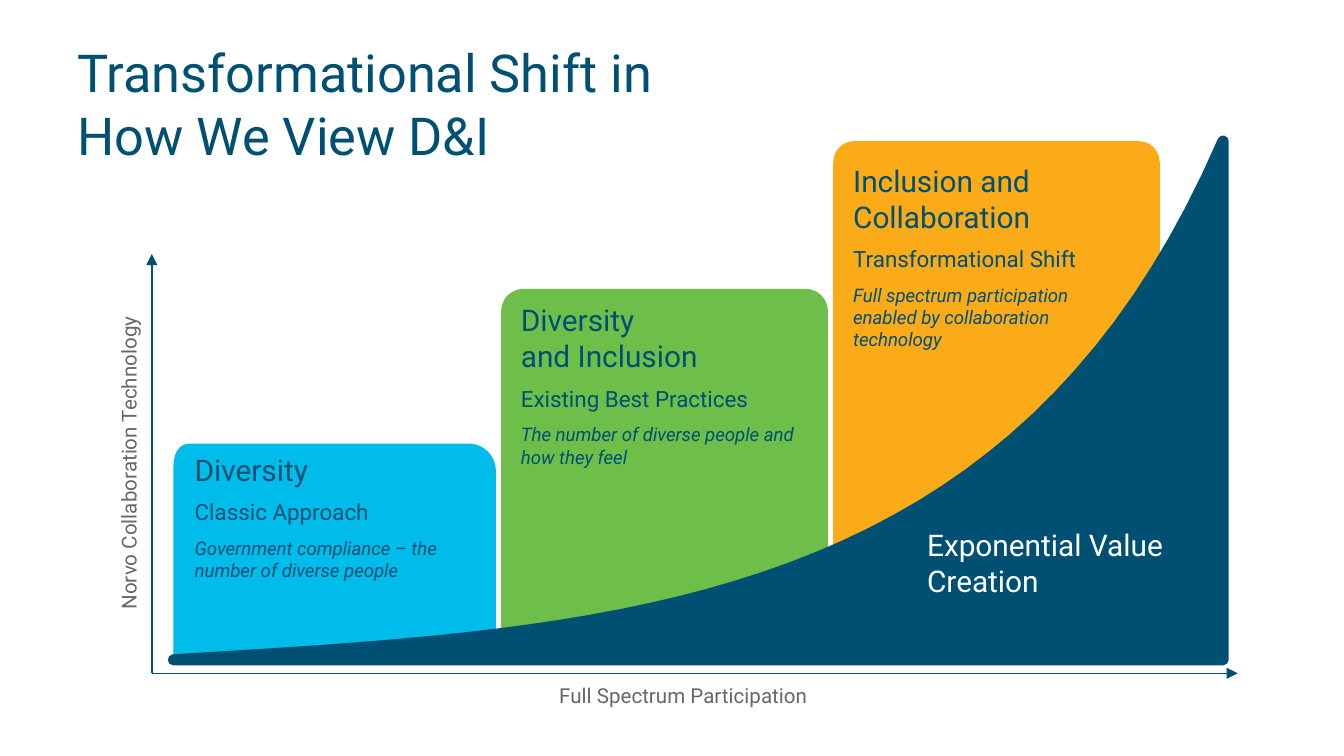
"""Build the slide on the shift from diversity to inclusion and collaboration."""
from dataclasses import dataclass

from lxml.etree import SubElement
from pptx import Presentation
from pptx.dml.color import RGBColor
from pptx.enum.shapes import MSO_CONNECTOR, MSO_SHAPE
from pptx.enum.text import MSO_ANCHOR, PP_ALIGN
from pptx.oxml.ns import qn
from pptx.util import Inches, Pt


@dataclass(frozen=True)
class Theme:
    font: str = "Roboto"
    navy: str = "005073"
    cyan: str = "00BCEB"
    green: str = "6EBE4A"
    amber: str = "FBAB18"
    gray: str = "676767"
    white: str = "FFFFFF"
    title: float = 28
    head: float = 16
    sub: float = 12
    note: float = 10
    axis: float = 11


T = Theme()


def write(tf, text, size=T.head, color=T.navy, italic=False, align=PP_ALIGN.LEFT, after=0):
    p = tf.add_paragraph() if tf.text else tf.paragraphs[0]
    p.text = text
    p.alignment = align
    p.space_after = Pt(after)
    for r in p.runs:
        r.font.name = T.font
        r.font.size = Pt(size)
        r.font.italic = italic
        r.font.color.rgb = RGBColor.from_string(color)


def bezier(a, b, c, d, n=40):
    steps = [i / n for i in range(n + 1)]
    return [
        tuple((1 - t) ** 3 * a[k] + 3 * (1 - t) ** 2 * t * b[k] + 3 * (1 - t) * t**2 * c[k] + t**3 * d[k]
              for k in (0, 1))
        for t in steps
    ]


prs = Presentation()
prs.slide_width, prs.slide_height = Inches(10), Inches(5.625)
G = prs.slide_width // 100  # square grid cell
s = prs.slides.add_slide(prs.slide_layouts[6])

# Rounded cards: the last one made is the green card
for box, radius, color in [
    ((62, 10.5, 24.3, 37.9), 0.064, T.amber),
    ((37.3, 21.5, 24.3, 27.5), 0.067, T.green),
]:
    card = s.shapes.add_shape(MSO_SHAPE.ROUNDED_RECTANGLE, *(round(v * G) for v in box))
    card.adjustments[0] = radius
    card.shadow.inherit = False
    card.fill.solid()
    card.fill.fore_color.rgb = RGBColor.from_string(color)
    card.line.fill.background()

left_corner = bezier((12.9, 35.1), (12.9, 33.9), (13.1, 33), (14.3, 33))
right_corner = bezier((34.8, 33), (36, 33), (36.9, 33.9), (36.9, 35.1))
value_curve = bezier((91, 10.5), (75.8, 45.7), (46.5, 47.1), (12.9, 49.1))
for points, color, width in [
    (left_corner + right_corner + [(36.9, 48.8), (12.9, 48.8)], T.cyan, 0),
    ([(12.9, 49.1), (91, 49.1)] + value_curve, T.navy, 6),
]:
    points = [(x * G, y * G) for x, y in points]
    fb = s.shapes.build_freeform(*points[0])
    fb.add_line_segments(points[1:], close=True)
    sp = fb.convert_to_shape()
    sp.shadow.inherit = False
    sp.fill.solid()
    sp.fill.fore_color.rgb = RGBColor.from_string(color)
    if width:
        sp.line.color.rgb = RGBColor.from_string(color)
        sp.line.width = Pt(width)
        SubElement(sp.line._get_or_add_ln(), qn("a:round"))
    else:
        sp.line.fill.background()

for x, y in [(11.3, 18.9), (92.1, 50.1)]:
    axis = s.shapes.add_connector(
        MSO_CONNECTOR.STRAIGHT, *(round(v * G) for v in (11.3, 50.1, x, y)))
    axis.line.color.rgb = RGBColor.from_string(T.navy)
    axis.line.width = Pt(0.75)
    SubElement(axis.line._get_or_add_ln(), qn("a:tailEnd"), type="triangle")
    SubElement(axis._element.spPr, qn("a:effectLst"))

for box, head, sub, note in [
    ((13.5, 33.1, 24, 14.6), "Diversity", "Classic Approach",
     "Government compliance – the number of diverse people"),
    (None, "Diversity\vand Inclusion", "Existing Best Practices",
     "The number of diverse people and how they feel"),
    ((62.5, 11.6, 22.7, 19), "Inclusion and Collaboration", "Transformational Shift",
     "Full spectrum participation enabled by collaboration technology"),
]:
    sp = s.shapes.add_textbox(*(round(v * G) for v in box)) if box else card
    tf = sp.text_frame
    tf.word_wrap = True
    tf.vertical_anchor = MSO_ANCHOR.TOP
    write(tf, head, after=6)
    write(tf, sub, size=T.sub, after=6)
    write(tf, note, size=T.note, italic=True, after=6)

axis_format = dict(size=T.axis, color=T.gray, align=PP_ALIGN.CENTER)
for box, turn, wrap, anchor, text, fmt in [
    ((4.8, 3.7, 48.4, 8), 0, True, MSO_ANCHOR.MIDDLE,
     "Transformational Shift in How We View D&I", dict(size=T.title)),
    ((-2.4, 33, 24, 2.9), 270, False, MSO_ANCHOR.TOP,
     "Norvo Collaboration Technology", axis_format),
    ((10.7, 50.3, 80.3, 2.9), 0, True, MSO_ANCHOR.TOP,
     "Full Spectrum Participation", axis_format),
    ((68, 38.7, 22, 6.4), 0, True, MSO_ANCHOR.TOP,
     "Exponential Value Creation", dict(color=T.white)),
]:
    sp = s.shapes.add_textbox(*(round(v * G) for v in box))
    sp.rotation = turn
    tf = sp.text_frame
    tf.word_wrap = wrap
    tf.vertical_anchor = anchor
    write(tf, text, **fmt)

prs.save("out.pptx")
